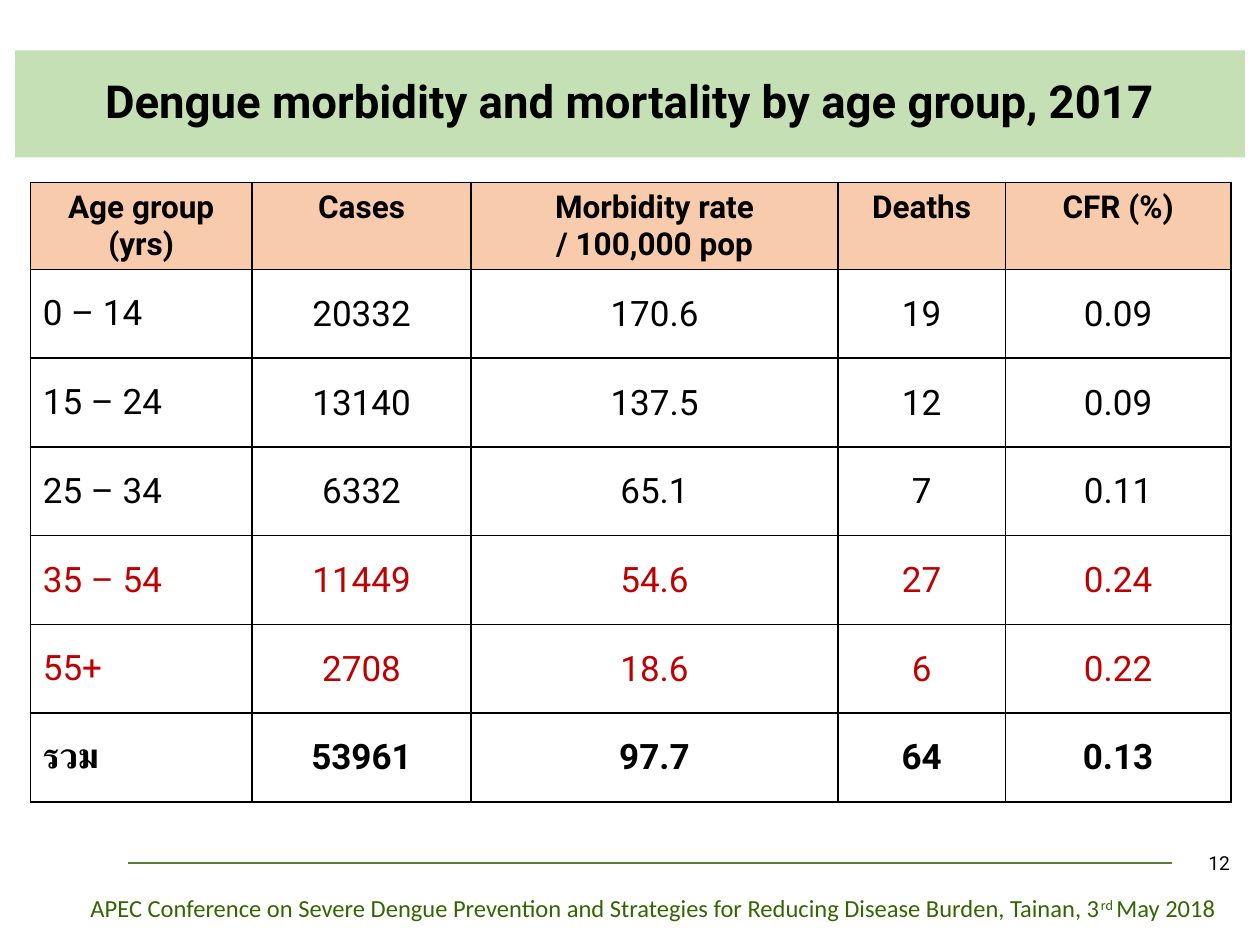
from pptx import Presentation
from pptx.dml.color import RGBColor
from pptx.enum.shapes import MSO_CONNECTOR as Connector
from pptx.enum.text import MSO_ANCHOR as Anchor, PP_ALIGN as Align
from pptx.oxml.ns import qn
from pptx.util import Inches, Pt
from lxml.etree import SubElement

BLACK = RGBColor(0x00, 0x00, 0x00)
RED = RGBColor(0xC0, 0x00, 0x00)
TITLE_GREEN = RGBColor(0xC5, 0xE0, 0xB4)
HEADER_PEACH = RGBColor(0xF8, 0xCB, 0xAD)
RULE_GREEN = RGBColor(0x54, 0x82, 0x35)
FOOTER_GREEN = RGBColor(0x33, 0x66, 0x00)

HEADERS = ["Age group (yrs)", "Cases", "Morbidity rate\n/ 100,000 pop", "Deaths", "CFR (%)"]
AGE_GROUPS = [
    ["0 – 14", "20332", "170.6", "19", "0.09"],
    ["15 – 24", "13140", "137.5", "12", "0.09"],
    ["25 – 34", "6332", "65.1", "7", "0.11"],
    ["35 – 54", "11449", "54.6", "27", "0.24"],
    ["55+", "2708", "18.6", "6", "0.22"],
]
HIGHLIGHTED = {"35 – 54", "55+"}
TOTAL = ["รวม", "53961", "97.7", "64", "0.13"]
COLUMN_WIDTHS = [1.76, 1.74, 2.91, 1.33, 1.79]
HEADER_HEIGHT = 0.67


def add_run(paragraph, text, size, color=BLACK, bold=False, name="Roboto"):
    run = paragraph.add_run()
    run.text = text
    font = run.font
    font.name, font.size, font.bold = name, Pt(size), bold
    font.color.rgb = color
    return run


def place(shape, box):
    shape.left, shape.top, shape.width, shape.height = map(Inches, box)


def add_title(slide, box):
    title = slide.shapes.title
    place(title, box)
    title.fill.solid()
    title.fill.fore_color.rgb = TITLE_GREEN
    title.text_frame.vertical_anchor = Anchor.MIDDLE
    paragraph = title.text_frame.paragraphs[0]
    paragraph.alignment = Align.CENTER
    paragraph.line_spacing = 0.9
    add_run(paragraph, "Dengue morbidity and mortality by age group, 2017", 26, bold=True)


def add_borders(cell):
    properties = cell._tc.get_or_add_tcPr()
    for position, side in enumerate(("lnL", "lnR", "lnT", "lnB")):
        line = properties.makeelement(qn(f"a:{side}"), {"w": str(Pt(1))})
        fill = SubElement(line, qn("a:solidFill"))
        SubElement(fill, qn("a:srgbClr"), val=str(BLACK))
        properties.insert(position, line)


def fill_cell(cell, text, size, color, bold, alignment, anchor):
    cell.vertical_anchor = anchor
    frame = cell.text_frame
    for index, line in enumerate(text.split("\n")):
        paragraph = frame.add_paragraph() if index else frame.paragraphs[0]
        paragraph.alignment = alignment
        add_run(paragraph, line, size, color, bold)


def add_age_table(slide, box):
    rows = [HEADERS, *AGE_GROUPS, TOTAL]
    table = slide.shapes.add_table(len(rows), len(HEADERS), *map(Inches, box)).table
    for column, width in zip(table.columns, COLUMN_WIDTHS):
        column.width = Inches(width)
    body_height = (box[3] - HEADER_HEIGHT) / (len(rows) - 1)
    for row_index, values in enumerate(rows):
        is_header, is_total = values is HEADERS, values is TOTAL
        table.rows[row_index].height = Inches(HEADER_HEIGHT if is_header else body_height)
        color = RED if values[0] in HIGHLIGHTED else BLACK
        for column_index, text in enumerate(values):
            cell = table.cell(row_index, column_index)
            if is_header:
                cell.fill.solid()
                cell.fill.fore_color.rgb = HEADER_PEACH
            else:
                cell.fill.background()
            add_borders(cell)
            is_label = column_index == 0 and not is_header
            if not (is_header or is_total or is_label):
                cell.margin_left = cell.margin_right = cell.margin_top = Inches(0.01)
                cell.margin_bottom = 0
            fill_cell(cell, text, 18 if is_header else 20, color, is_header or is_total,
                      Align.LEFT if is_label else Align.CENTER,
                      Anchor.TOP if is_header else Anchor.MIDDLE)


def add_footer(slide, box):
    left, top, width, height = box
    group = slide.shapes.add_group_shape()
    rule = group.shapes.add_connector(
        Connector.STRAIGHT, Inches(left + 0.4), Inches(top), Inches(left + 8.68), Inches(top))
    rule.line.color.rgb = RULE_GREEN
    rule.line.width = Pt(1)
    SubElement(rule._element.spPr, qn("a:effectLst"))
    caption = group.shapes.add_textbox(
        Inches(left), Inches(top + 0.19), Inches(width), Inches(height - 0.19))
    caption.text_frame.word_wrap = False
    paragraph = caption.text_frame.paragraphs[0]
    style = {"size": 14, "color": FOOTER_GREEN, "name": "Calibri"}
    add_run(paragraph, "APEC Conference on Severe Dengue Prevention and Strategies "
                       "for Reducing Disease Burden, Tainan, 3", **style)
    ordinal = add_run(paragraph, "rd ", **style)
    ordinal.font._element.set("baseline", "30000")
    add_run(paragraph, "May 2018", **style)


def add_page_number(slide, box):
    frame = slide.shapes.add_textbox(*map(Inches, box)).text_frame
    frame.word_wrap = True
    frame.vertical_anchor = Anchor.MIDDLE
    paragraph = frame.paragraphs[0]
    paragraph.alignment = Align.RIGHT
    add_run(paragraph, "12", 11)


def main():
    presentation = Presentation()
    presentation.slide_width, presentation.slide_height = Inches(10), Inches(7.5)
    slide = presentation.slides.add_slide(presentation.slide_layouts[5])
    add_title(slide, (0.12, 0.4, 9.76, 0.85))
    add_age_table(slide, (0.24, 1.45, 9.52, 4.9))
    add_footer(slide, (0.62, 6.85, 9.24, 0.53))
    add_page_number(slide, (7.61, 6.65, 2.25, 0.4))
    presentation.save("out.pptx")


if __name__ == "__main__":
    main()
